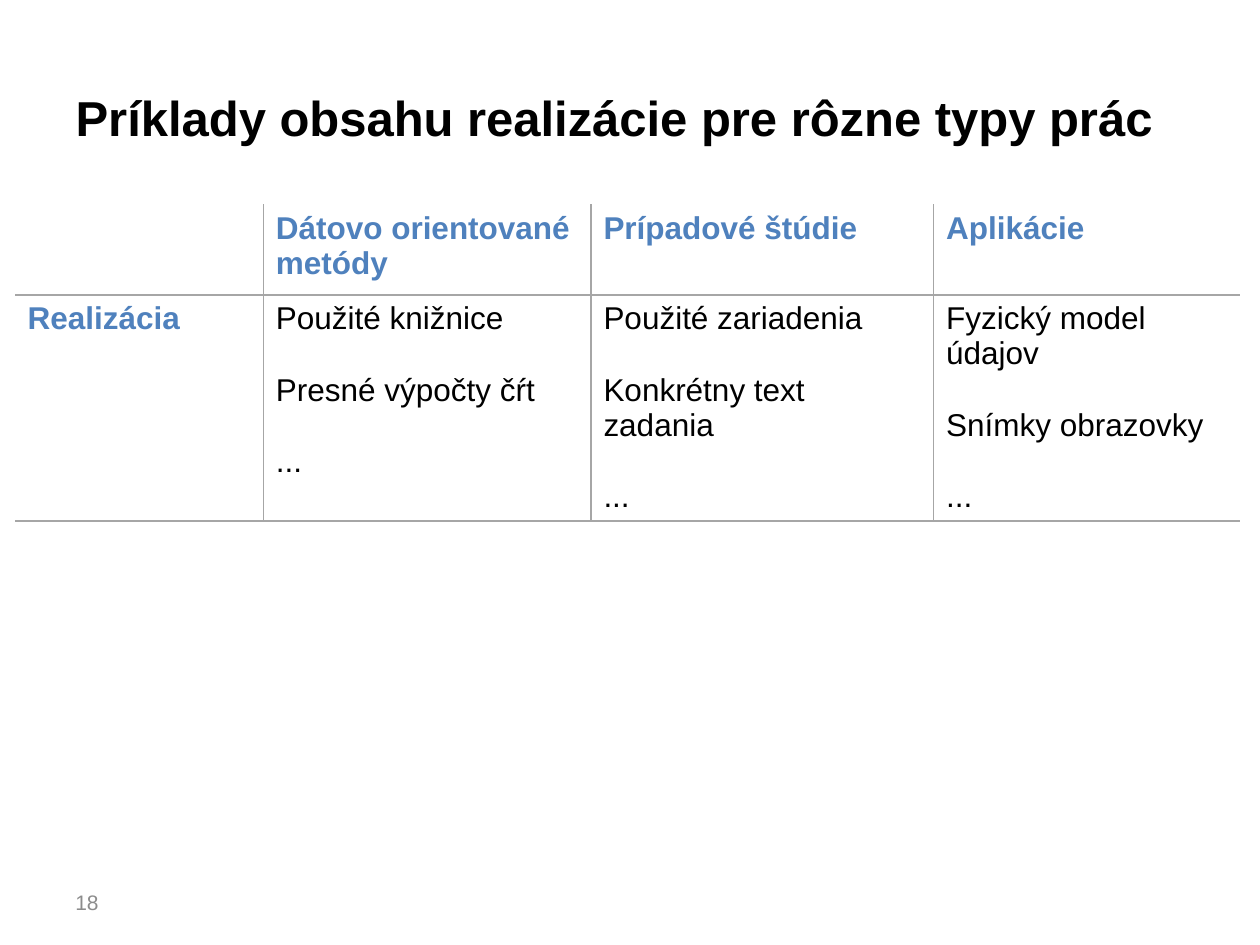
from lxml.etree import SubElement
from pptx import Presentation
from pptx.dml.color import RGBColor
from pptx.enum.text import MSO_ANCHOR as Anchor, PP_ALIGN as Align
from pptx.oxml.ns import qn
from pptx.util import Inches, Pt

BLACK = RGBColor(0x00, 0x00, 0x00)
BLUE = RGBColor(0x4F, 0x81, 0xBD)
GRAY = RGBColor(0x8C, 0x8C, 0x8C)
RULE = RGBColor(0xA6, 0xA6, 0xA6)

COLUMN_WIDTHS = [1.97, 2.6, 2.72, 2.43]
ROW_HEIGHTS = [0.72, 1.78]
ROWS = [
    [[""], ["Dátovo orientované metódy"], ["Prípadové štúdie"], ["Aplikácie"]],
    [
        ["Realizácia"],
        ["Použité knižnice", "Presné výpočty čŕt", "..."],
        ["Použité zariadenia", "Konkrétny text zadania", "..."],
        ["Fyzický model údajov", "Snímky obrazovky", "..."],
    ],
]


class SlideBuilder:
    font_name = "Arial"
    line_gap = Pt(20.7)

    def __init__(self, page):
        self.page = page

    def fill_text(self, frame, lines, size, color, bold=False):
        frame.word_wrap = True
        frame.text = "\n".join(lines)
        for index, para in enumerate(frame.paragraphs):
            para.alignment = Align.LEFT
            if index:
                para.space_before = self.line_gap
            para.font.size = Pt(size)
            for span in para.runs:
                span.font.name = self.font_name
                span.font.size = Pt(size)
                span.font.bold = bold
                span.font.color.rgb = color

    def title(self, text, left, top, width, height):
        box = self.page.shapes.title
        box.left, box.top = Inches(left), Inches(top)
        box.width, box.height = Inches(width), Inches(height)
        box.text_frame.vertical_anchor = Anchor.MIDDLE
        self.fill_text(box.text_frame, [text], 28, BLACK, True)

    def label(self, text, left, top, width, height):
        box = self.page.shapes.add_textbox(
            Inches(left), Inches(top), Inches(width), Inches(height))
        box.text_frame.vertical_anchor = Anchor.MIDDLE
        self.fill_text(box.text_frame, [text], 12, GRAY)

    def borders(self, cell, visible):
        properties = cell._tc.get_or_add_tcPr()
        for side in "LRTB":
            line = SubElement(properties, qn(f"a:ln{side}"), w=str(Pt(1)))
            if side in visible:
                fill = SubElement(line, qn("a:solidFill"))
                SubElement(fill, qn("a:srgbClr"), val=str(RULE))
            else:
                SubElement(line, qn("a:noFill"))

    def table(self, rows, left, top, widths, heights):
        frame = self.page.shapes.add_table(
            len(rows), len(widths), Inches(left), Inches(top),
            Inches(sum(widths)), Inches(sum(heights)))
        table = frame.table
        table.first_row = table.horz_banding = False
        for column, width in zip(table.columns, widths):
            column.width = Inches(width)
        for row, height in zip(table.rows, heights):
            row.height = Inches(height)
        for r, row in enumerate(rows):
            for c, lines in enumerate(row):
                cell = table.cell(r, c)
                heading = r == 0 or c == 0
                self.fill_text(cell.text_frame, lines, 18,
                               BLUE if heading else BLACK, heading)
                visible = "B"
                visible += "L" if c > 0 else ""
                visible += "R" if c < len(widths) - 1 else ""
                visible += "T" if r > 0 else ""
                self.borders(cell, visible)
                cell.fill.background()


def main():
    deck = Presentation()
    deck.slide_width, deck.slide_height = Inches(10), Inches(7.5)
    builder = SlideBuilder(deck.slides.add_slide(deck.slide_layouts[5]))
    builder.title("Príklady obsahu realizácie pre rôzne typy prác",
                  0.5, 0.3, 9, 1.25)
    builder.table(ROWS, 0.12, 1.62, COLUMN_WIDTHS, ROW_HEIGHTS)
    builder.label("18", 0.5, 6.96, 2.33, 0.4)
    deck.save("out.pptx")


if __name__ == "__main__":
    main()
